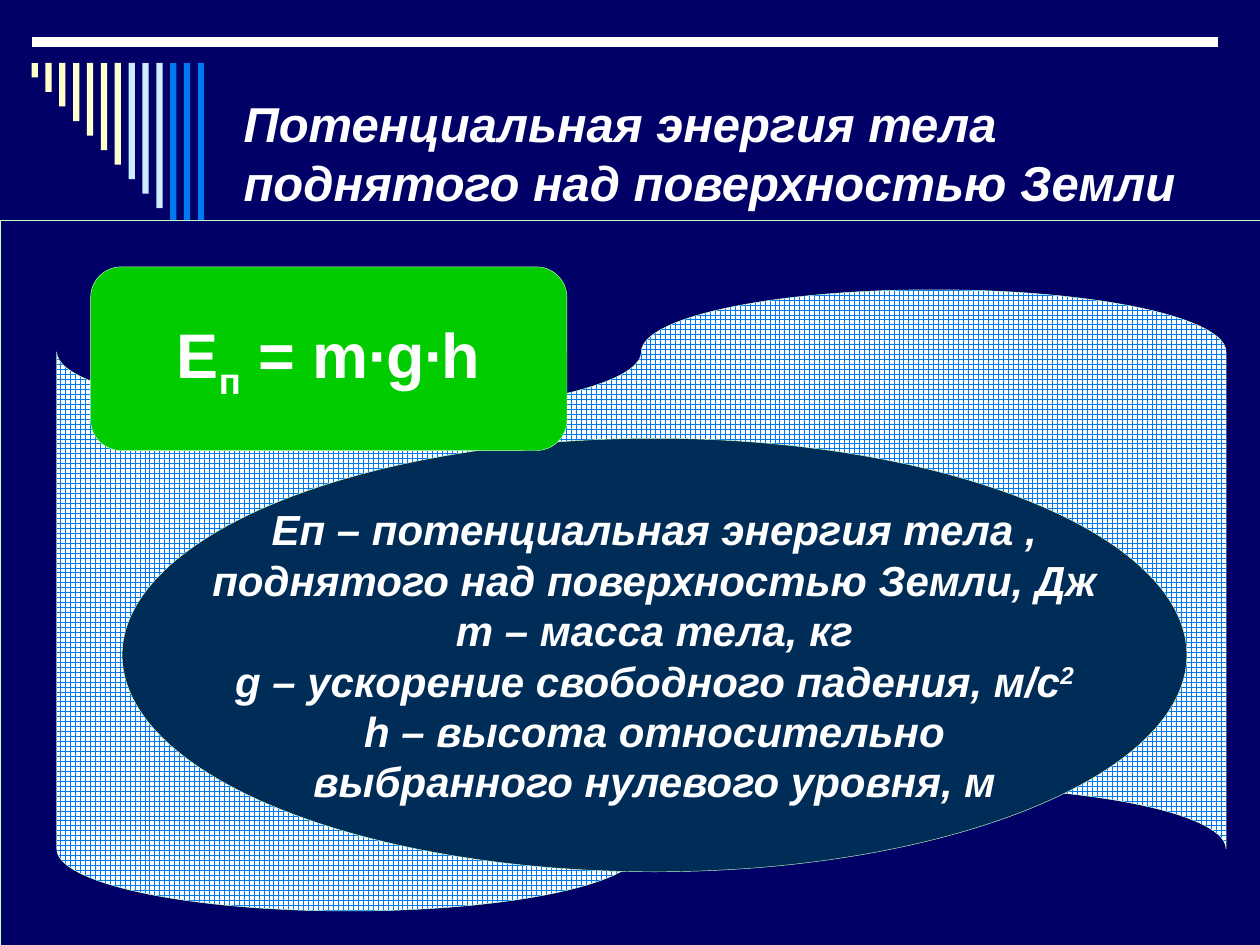
from pptx import Presentation
from pptx import util as u
from pptx.dml.color import RGBColor
from pptx.enum import dml, shapes, text
from pptx.oxml.ns import qn
from lxml import etree

NAVY = RGBColor(0x00, 0x00, 0x66)
WHITE = RGBColor(0xFF, 0xFF, 0xFF)
CREAM = RGBColor(0xFF, 0xFF, 0xCC)
ICE = RGBColor(0xCC, 0xEC, 0xFF)
BLUE = RGBColor(0x00, 0x78, 0xF0)
DEEP = RGBColor(0x00, 0x2C, 0x58)
GREEN = RGBColor(0x00, 0xCC, 0x00)
MINT = RGBColor(0xC5, 0xFF, 0xC5)

SHAPE = shapes.MSO_SHAPE
SUB, SUPER = -25000, 30000


class Board:
    """Current slide together with its text style."""

    font = "Arial"

    def __init__(self, slide):
        self.slide = slide
        slide.background.fill.solid()
        slide.background.fill.fore_color.rgb = NAVY

    def title(self, wording, left, top, width, height, size):
        holder = self.slide.shapes.title
        holder.left, holder.top = u.Pt(left), u.Pt(top)
        holder.width, holder.height = u.Pt(width), u.Pt(height)
        self.add_text(holder, [[(wording, 0)]], size, True, text.PP_ALIGN.LEFT)
        holder.text_frame.word_wrap = True

    def rule(self, x1, y1, x2, y2, weight):
        line = self.slide.shapes.add_connector(
            shapes.MSO_CONNECTOR.STRAIGHT, u.Pt(x1), u.Pt(y1), u.Pt(x2), u.Pt(y2))
        line.line.color.rgb = WHITE
        line.line.width = u.Pt(weight)
        etree.SubElement(line._element.spPr, qn("a:effectLst"))

    def block(self, kind, left, top, width, height, color, outline=None):
        item = self.slide.shapes.add_shape(
            kind, u.Pt(left), u.Pt(top), u.Pt(width), u.Pt(height))
        item.shadow.inherit = False
        item.fill.solid()
        item.fill.fore_color.rgb = color
        if outline is None:
            item.line.fill.background()
        else:
            item.line.color.rgb = outline
            item.line.width = u.Pt(0.25)
        return item

    def hatch(self, item, front, back):
        item.fill.patterned()
        item.fill.pattern = dml.MSO_PATTERN.CROSS
        item.fill.fore_color.rgb = front
        item.fill.back_color.rgb = back

    def add_text(self, item, lines, size, italic, align=text.PP_ALIGN.CENTER):
        frame = item.text_frame
        frame.auto_size = text.MSO_AUTO_SIZE.NONE
        frame.word_wrap = False
        frame.vertical_anchor = text.MSO_ANCHOR.MIDDLE
        for number, parts in enumerate(lines):
            paragraph = frame.add_paragraph() if number else frame.paragraphs[0]
            paragraph.alignment = align
            for wording, baseline in parts:
                run = paragraph.add_run()
                run.text = wording
                run.font.name = self.font
                run.font.size = u.Pt(size)
                run.font.bold, run.font.italic = True, italic
                run.font.color.rgb = WHITE
                if baseline:
                    run._r.get_or_add_rPr().set("baseline", str(baseline))


def main():
    deck = Presentation()
    deck.slide_width, deck.slide_height = u.Pt(720), u.Pt(540)
    board = Board(deck.slides.add_slide(deck.slide_layouts[5]))

    # Top rule and the bars growing to the right
    board.rule(18, 24, 696, 24, 6)
    for step, color in enumerate([CREAM] * 7 + [ICE] * 3 + [BLUE] * 3):
        board.block(SHAPE.RECTANGLE, 18 + 7.92 * step, 36, 3.6, 8.3 * (step + 1), color)

    # Title
    board.title("Потенциальная энергия тела поднятого над поверхностью Земли",
                132, 36, 552, 102, 28)

    # Panel and patterned wave
    board.block(SHAPE.RECTANGLE, 0, 126, 720, 414, NAVY, MINT)
    wave = board.block(SHAPE.FLOWCHART_PUNCHED_TAPE, 32.4, 165.6, 668.2, 355, WHITE, MINT)
    board.hatch(wave, BLUE, WHITE)

    # Meaning of the symbols
    legend = board.block(SHAPE.OVAL, 69.8, 250.5, 608.4, 247.7, DEEP, MINT)
    board.add_text(legend, [
        [("Еп – потенциальная энергия тела ,", 0)],
        [("поднятого над поверхностью Земли, Дж", 0)],
        [("m – масса тела, кг", 0)],
        [("g – ускорение свободного падения, м/с", 0), ("2", SUPER)],
        [("h – высота относительно", 0)],
        [("выбранного нулевого уровня, м", 0)],
    ], 24, True)

    # Formula
    formula = board.block(SHAPE.FLOWCHART_ALTERNATE_PROCESS, 51.8, 152.5, 272.2, 105, GREEN, MINT)
    board.add_text(formula, [[("Е", 0), ("п", SUB), (" = m∙g∙h", 0)]], 36, False)

    deck.save("out.pptx")


if __name__ == "__main__":
    main()
